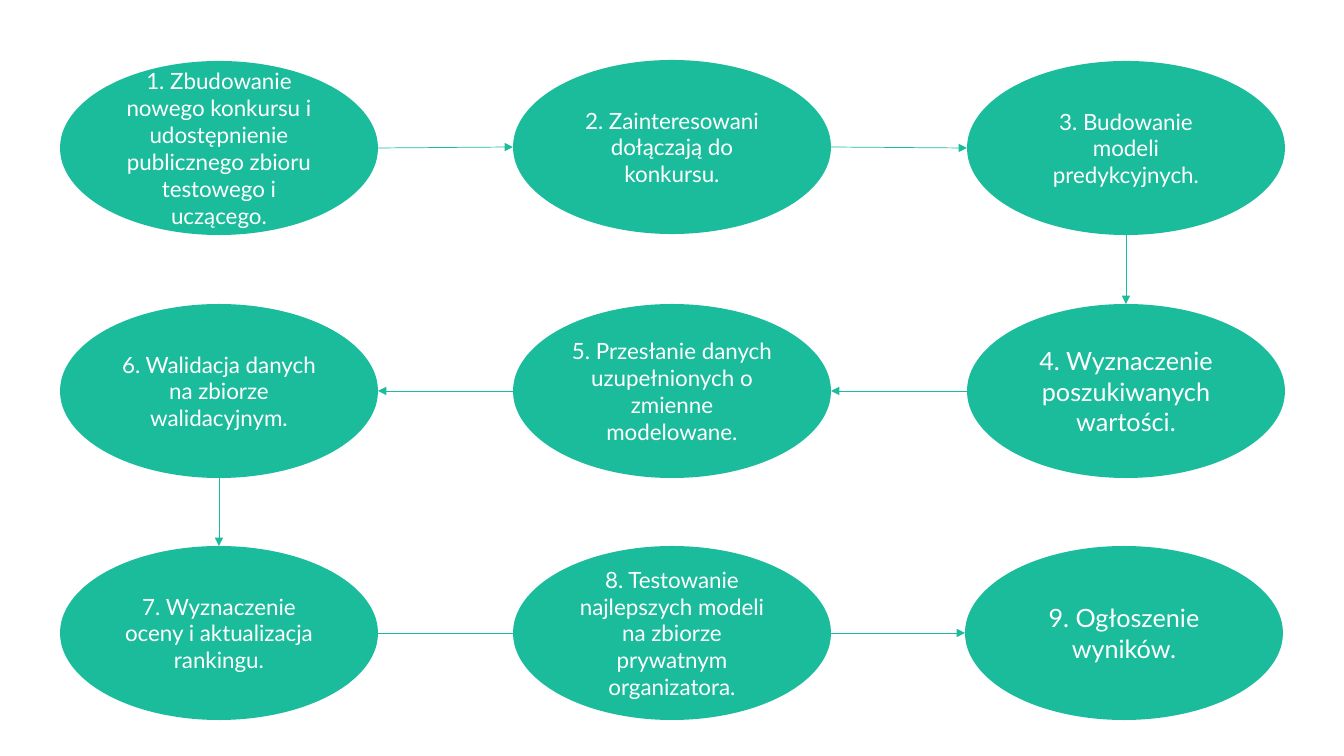
from itertools import pairwise

from lxml import etree
from pptx import Presentation
from pptx import util as u
from pptx.dml.color import RGBColor
from pptx.enum import shapes, text
from pptx.oxml.ns import qn

EMU_PER_PX = 914400 / 100.8


def px(length):
    return u.Emu(round(length * EMU_PER_PX))


def color(value):
    return RGBColor.from_string(value)


class Flow:
    font = "Lato"
    green = "1ABC9C"
    white = "FFFFFF"
    width, height = 318, 174

    def __init__(self, slide):
        self.slide = slide

    def step(self, left, top, label, size):
        oval = self.slide.shapes.add_shape(
            shapes.MSO_SHAPE.OVAL, px(left), px(top), px(self.width), px(self.height))
        oval.shadow.inherit = False
        oval.fill.solid()
        oval.fill.fore_color.rgb = color(self.green)
        oval.line.fill.background()
        frame = oval.text_frame
        frame.word_wrap = True
        frame.vertical_anchor = text.MSO_ANCHOR.MIDDLE
        frame.text = label
        paragraph = frame.paragraphs[0]
        paragraph.alignment = text.PP_ALIGN.CENTER
        font = paragraph.runs[0].font
        font.name = self.font
        font.size = u.Pt(size)
        font.color.rgb = color(self.white)

    def arrow(self, start, end):
        link = self.slide.shapes.add_connector(
            shapes.MSO_CONNECTOR.STRAIGHT, *map(px, start), *map(px, end))
        link.line.color.rgb = color(self.green)
        link.line.width = u.Pt(0.5)
        tip = etree.SubElement(link.line._get_or_add_ln(), qn("a:tailEnd"))
        tip.set("type", "triangle")
        etree.SubElement(link._element.spPr, qn("a:effectLst"))

    def link_steps(self, source, target, overlap=0):
        (x1, y1), (x2, y2) = source, target
        half_width, half_height = self.width // 2, self.height // 2
        if x1 == x2:
            center = x1 + half_width
            self.arrow((center, y1 + self.height), (center, y2))
        else:
            side = 1 if x2 > x1 else -1
            start_x = x1 + half_width + side * half_width
            end_x = x2 + half_width - side * (half_width - overlap)
            self.arrow((start_x, y1 + half_height), (end_x, y2 + half_height))


STEPS = [
    ("1. Zbudowanie nowego konkursu i udostępnienie publicznego zbioru testowego i uczącego.", 16),
    ("2. Zainteresowani dołączają do konkursu.", 16),
    ("3. Budowanie modeli predykcyjnych.", 16),
    ("4. Wyznaczenie poszukiwanych wartości.", 18),
    ("5. Przesłanie danych uzupełnionych o zmienne modelowane.", 16),
    ("6. Walidacja danych na zbiorze walidacyjnym.", 16),
    ("7. Wyznaczenie oceny i aktualizacja rankingu.", 16),
    ("8. Testowanie najlepszych modeli na zbiorze prywatnym organizatora.", 16),
    ("9. Ogłoszenie wyników.", 18),
]
COLUMNS = [60, 513, 967]
ROWS = [61, 304, 546]
NUDGES = {1: (0, -1), 8: (-2, 0)}
OVERLAPS = {6: 16}


def place(index):
    row, column = divmod(index, len(COLUMNS))
    if row % 2:
        column = len(COLUMNS) - 1 - column
    dx, dy = NUDGES.get(index, (0, 0))
    return COLUMNS[column] + dx, ROWS[row] + dy


def main():
    deck = Presentation()
    deck.slide_width, deck.slide_height = px(1344), px(756)
    flow = Flow(deck.slides.add_slide(deck.slide_layouts[6]))
    places = [place(index) for index in range(len(STEPS))]
    for (left, top), (label, size) in zip(places, STEPS):
        flow.step(left, top, label, size)
    for index, (source, target) in enumerate(pairwise(places)):
        flow.link_steps(source, target, OVERLAPS.get(index, 0))
    deck.save("out.pptx")


if __name__ == "__main__":
    main()
